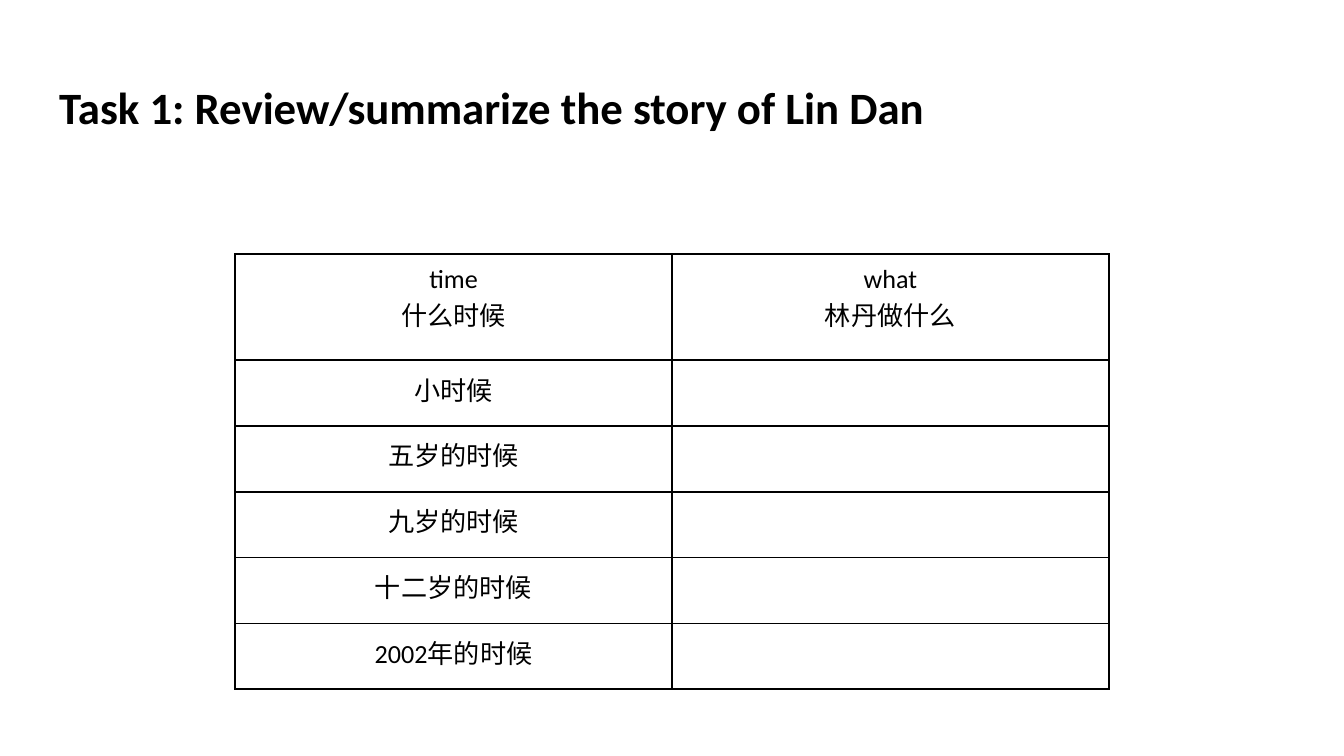
from lxml.etree import SubElement
from pptx import Presentation
from pptx.dml.color import RGBColor as Rgb
from pptx.enum.text import MSO_ANCHOR as Anchor, PP_ALIGN as Align
from pptx.oxml.ns import qn
from pptx.util import Inches, Pt


def color(code):
    return Rgb.from_string(code)


class Deck:
    face = "Calibri"
    ink = "000000"
    paper = "FFFFFF"

    def __init__(self, wide, high):
        self.file = Presentation()
        self.file.slide_width = Inches(wide)
        self.file.slide_height = Inches(high)
        self.slide = self.file.slides.add_slide(self.file.slide_layouts[5])

    def style(self, para, size, align, bold=False):
        para.alignment = align
        para.font.name = self.face
        para.font.size = Pt(size)
        para.font.bold = bold
        para.font.color.rgb = color(self.ink)

    def title(self, text, left, top, wide, high):
        shape = self.slide.shapes.title
        shape.left, shape.top = Inches(left), Inches(top)
        shape.width, shape.height = Inches(wide), Inches(high)
        frame = shape.text_frame
        frame.text = text
        frame.word_wrap = True
        frame.vertical_anchor = Anchor.TOP
        frame.margin_left = frame.margin_right = Inches(0.1)
        frame.margin_top = frame.margin_bottom = Inches(0.1)
        self.style(frame.paragraphs[0], 24, Align.LEFT, True)

    def border(self, cell):
        props = cell._tc.get_or_add_tcPr()
        for place, side in enumerate(("a:lnL", "a:lnR", "a:lnT", "a:lnB")):
            line = SubElement(props, qn(side), w=str(Pt(1)))
            fill = SubElement(line, qn("a:solidFill"))
            SubElement(fill, qn("a:srgbClr"), val=self.ink)
            props.insert(place, line)

    def cell(self, cell, text):
        cell.text = text
        cell.vertical_anchor = Anchor.TOP
        cell.margin_left = cell.margin_right = Inches(0.07)
        cell.margin_top = cell.margin_bottom = Inches(0.07)
        cell.fill.solid()
        cell.fill.fore_color.rgb = color(self.paper)
        for para in cell.text_frame.paragraphs:
            self.style(para, 14, Align.CENTER)
        self.border(cell)

    def table(self, rows, left, top, cols, highs):
        grid = self.slide.shapes.add_table(
            len(rows), len(cols), Inches(left), Inches(top),
            Inches(sum(cols)), Inches(sum(highs))).table
        grid.first_row = grid.horz_banding = False
        for col, wide in zip(grid.columns, cols):
            col.width = Inches(wide)
        for row, high, texts in zip(grid.rows, highs, rows):
            row.height = Inches(high)
            for cell, text in zip(row.cells, texts):
                self.cell(cell, text)


def main():
    deck = Deck(10, 10 * 9 / 16)
    deck.title("Task 1: Review/summarize the story of Lin Dan",
               0.34, 0.49, 9.32, 0.63)
    times = ["小时候", "五岁的时候", "九岁的时候", "十二岁的时候", "2002年的时候"]
    rows = [("time\n什么时候", "what\n林丹做什么")]
    rows += [(time, "") for time in times]
    deck.table(rows, 1.75, 1.89, [3.25] * 2, [0.79] + [0.49] * len(times))
    deck.file.save("out.pptx")


if __name__ == "__main__":
    main()
